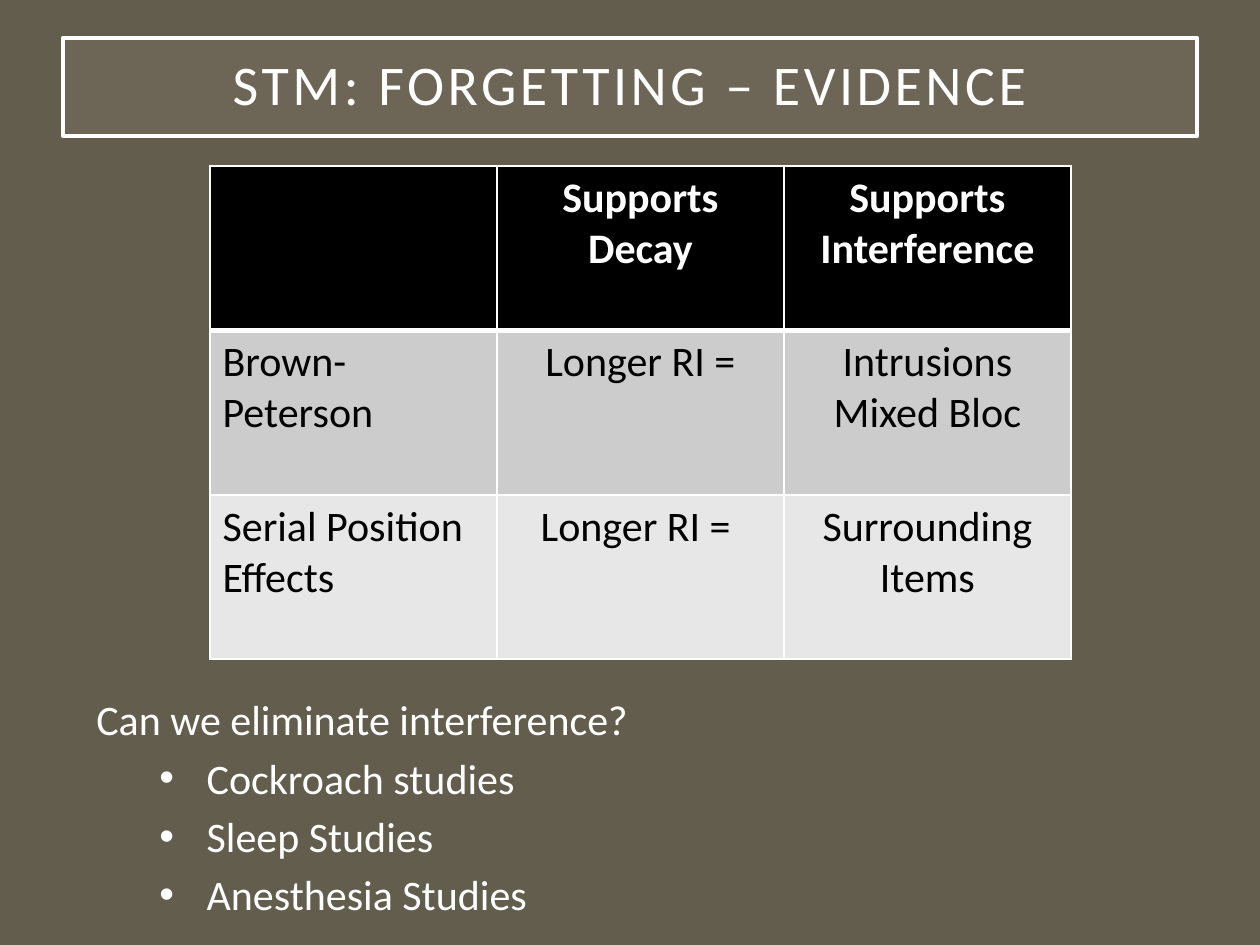
from lxml import etree
from pptx import Presentation
from pptx.dml.color import RGBColor
from pptx.enum.shapes import MSO_SHAPE
from pptx.enum.text import MSO_ANCHOR, PP_ALIGN
from pptx.oxml.ns import qn
from pptx.util import Pt

RECT = MSO_SHAPE.RECTANGLE
MIDDLE = MSO_ANCHOR.MIDDLE
LEFT, CENTER = PP_ALIGN.LEFT, PP_ALIGN.CENTER
HUES = {
    "back": "635D4D", "panel": "A7A08E", "white": "FFFFFF",
    "black": "000000", "band": "CCCCCC", "pale": "E7E7E7",
}
ROWS = [
    ["", "Supports Decay", "Supports Interference"],
    ["Brown-Peterson", "Longer RI =", "Intrusions\nMixed Bloc"],
    ["Serial Position Effects", "Longer RI = ", "Surrounding Items"],
]
STUDIES = ["Cockroach studies", "Sleep Studies", "Anesthesia Studies"]


def color(name):
    return RGBColor.from_string(HUES[name])


def put(item, form):
    for key, value in form.items():
        setattr(item, key, value)


def paint(fill, hue):
    fill.solid()
    fill.fore_color.rgb = color(hue)


class Deck:
    def __init__(self, slide, font):
        self.slide = slide
        self.font = font
        paint(slide.background.fill, "back")

    def add_run(self, para, text, hue, size=24, bold=False, **form):
        """Add one run; form holds paragraph values."""
        run = para.add_run()
        run.text = text
        put(run.font, {"name": self.font, "size": Pt(size), "bold": bold})
        run.font.color.rgb = color(hue)
        put(para, form)
        return run

    def title(self, text, box):
        shape = self.slide.shapes.add_shape(RECT, *map(Pt, box))
        shape.shadow.inherit = False
        paint(shape.fill, "panel")
        tint = shape._element.spPr.find(".//" + qn("a:srgbClr"))
        etree.SubElement(tint, qn("a:alpha"), val="15000")
        shape.line.color.rgb = color("white")
        shape.line.width = Pt(2.5)
        frame = shape.text_frame
        sides = ("left", "top", "right", "bottom")
        put(frame, {f"margin_{side}": Pt(14.4) for side in sides})
        put(frame, {"word_wrap": True, "vertical_anchor": MIDDLE})
        run = self.add_run(frame.paragraphs[0], text, "white", 32,
                           alignment=CENTER, line_spacing=0.9)
        run._r.get_or_add_rPr().set("spc", "200")

    def edge(self, cell, top, base):
        """Draw white cell borders; top and base are line widths."""
        props = cell._tc.get_or_add_tcPr()
        widths = {"lnL": 1, "lnR": 1, "lnT": top, "lnB": base}
        for spot, (tag, width) in enumerate(widths.items()):
            line = etree.Element(qn("a:" + tag), w=str(Pt(width)))
            fill = etree.SubElement(line, qn("a:solidFill"))
            etree.SubElement(fill, qn("a:srgbClr"), val=HUES["white"])
            props.insert(spot, line)

    def table(self, rows, left, top, wide, high):
        count, span = len(rows), len(rows[0])
        grid = self.slide.shapes.add_table(
            count, span, Pt(left), Pt(top), Pt(wide * span), Pt(high * count)).table
        for r, (row, hue) in enumerate(zip(rows, ("black", "band", "pale"))):
            head = r == 0
            for c, text in enumerate(row):
                cell = grid.cell(r, c)
                paint(cell.fill, hue)
                self.edge(cell, 3 if r == 1 else 1, 3 if head else 1)
                frame = cell.text_frame
                for n, part in enumerate(text.split("\n") if text else []):
                    para = frame.add_paragraph() if n else frame.paragraphs[0]
                    self.add_run(para, part, "white" if head else "black",
                                 bold=head, alignment=CENTER if c else LEFT)

    def bullets(self, lead, items, box):
        frame = self.slide.shapes.add_textbox(*map(Pt, box)).text_frame
        frame.word_wrap = True
        self.add_run(frame.paragraphs[0], lead, "white")
        for item in items:
            para = frame.add_paragraph()
            self.add_run(para, item, "white", space_before=Pt(4.5))
            props = para._p.get_or_add_pPr()
            for key, value in {"marL": 63, "indent": -27}.items():
                props.set(key, str(Pt(value)))
            etree.SubElement(props, qn("a:buFont"), typeface="Arial")
            etree.SubElement(props, qn("a:buChar"), char="•")


def main():
    show = Presentation()
    put(show, {"slide_width": Pt(720), "slide_height": Pt(540)})
    deck = Deck(show.slides.add_slide(show.slide_layouts[6]), "Calibri")
    deck.title("STM: FORGETTING – EVIDENCE", (36, 21.6, 648, 56.2))
    deck.table(ROWS, 120, 95, 164, 93.9)
    deck.bullets("Can we eliminate interference?", STUDIES, (48, 393, 648, 142))
    show.save("out.pptx")


if __name__ == "__main__":
    main()
